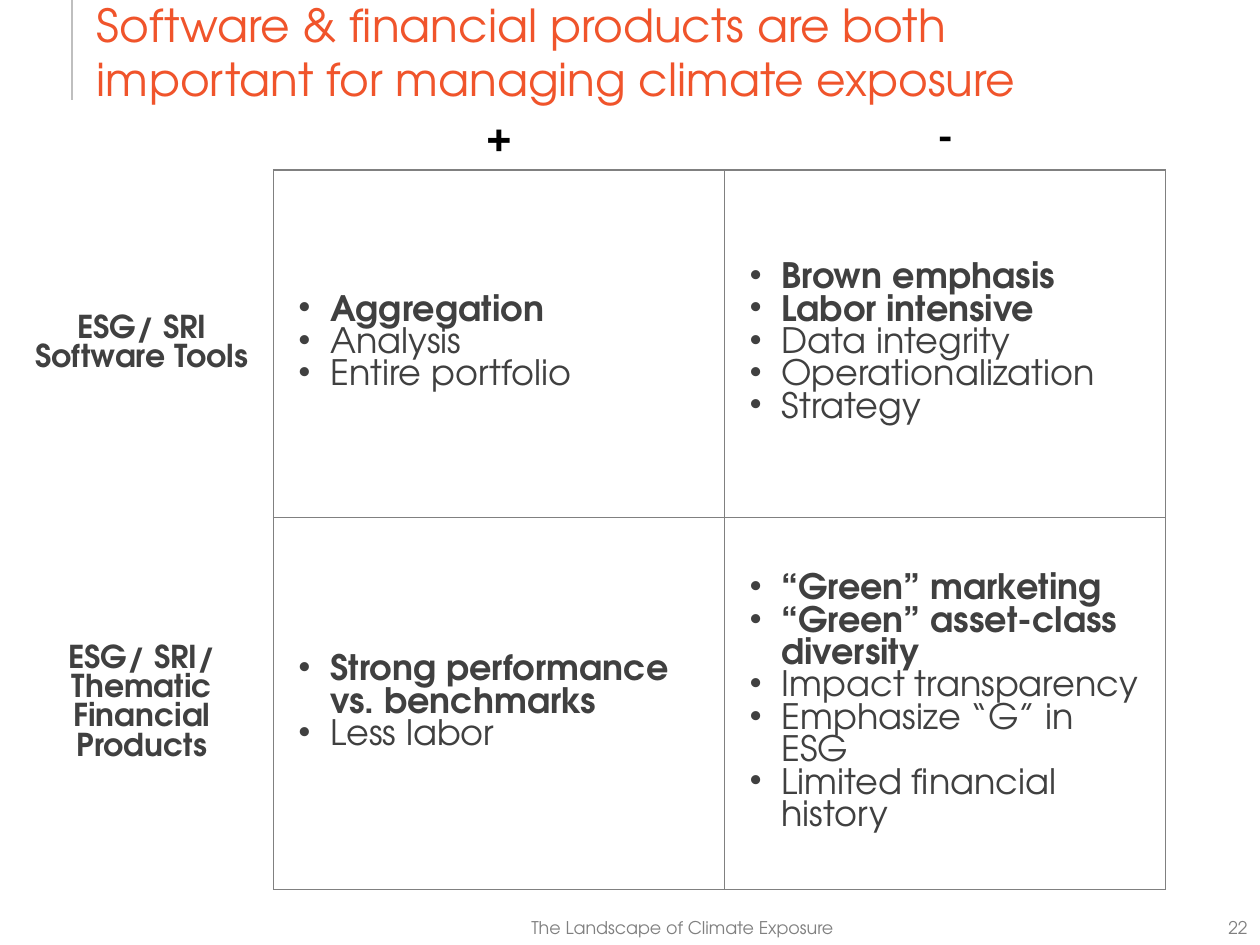
from dataclasses import dataclass

from lxml import etree
from pptx import Presentation
from pptx.dml.color import RGBColor
from pptx.enum.shapes import MSO_CONNECTOR
from pptx.enum.text import MSO_ANCHOR, PP_ALIGN
from pptx.oxml.ns import qn
from pptx.util import Pt

LEFT, CENTER, RIGHT = PP_ALIGN.LEFT, PP_ALIGN.CENTER, PP_ALIGN.RIGHT
TOP, MIDDLE, BOTTOM = MSO_ANCHOR.TOP, MSO_ANCHOR.MIDDLE, MSO_ANCHOR.BOTTOM
STRAIGHT = MSO_CONNECTOR.STRAIGHT


@dataclass(frozen=True)
class Theme:
    font: str = "TeX Gyre Adventor"
    accent: str = "F0542B"
    body: str = "404040"
    sign: str = "000000"
    muted: str = "808080"
    rule: str = "BFBFBF"
    title_size: int = 26
    sign_size: int = 22
    body_size: int = 20
    label_size: int = 18
    footer_size: int = 10
    tight: float = 0.925  # line pitch in table text, as a share of type size


class Deck:
    def __init__(self, slide, theme):
        self.slide, self.theme = slide, theme

    def style(self, p, size, color, align=LEFT, bold=False, pitch=None):
        p.alignment = align
        p.font.name, p.font.size, p.font.bold = self.theme.font, Pt(size), bold
        p.font.color.rgb = RGBColor.from_string(color)
        if pitch:
            p.line_spacing = Pt(round(size * pitch, 1))

    def text(self, text, box, size, color, align=LEFT, anchor=TOP, pitch=None):
        tf = self.slide.shapes.add_textbox(*map(Pt, box)).text_frame
        tf.word_wrap, tf.vertical_anchor = True, anchor
        p = tf.paragraphs[0]
        p.text = text
        self.style(p, size, color, align, pitch=pitch)

    def line(self, x1, y1, x2, y2, color, width):
        sp = self.slide.shapes.add_connector(STRAIGHT, *map(Pt, (x1, y1, x2, y2)))
        sp.line.color.rgb = RGBColor.from_string(color)
        sp.line.width = Pt(width)
        etree.SubElement(sp._element.spPr, qn("a:effectLst"))

    def table(self, x, y, cols, rows):
        shape = self.slide.shapes.add_table(
            len(rows), len(cols), Pt(x), Pt(y), Pt(sum(cols)), Pt(sum(rows)))
        tbl = shape.table
        tbl.first_row = tbl.horz_banding = False
        for col, width in zip(tbl.columns, cols):
            col.width = Pt(width)
        for row, height in zip(tbl.rows, rows):
            row.height = Pt(height)
        return tbl

    def borders(self, cell, sides):
        tc_pr = cell._tc.get_or_add_tcPr()
        for i, side in enumerate("LRTB"):
            ln = etree.Element(qn(f"a:ln{side}"), w=str(Pt(1)))
            if side in sides:
                fill = etree.SubElement(ln, qn("a:solidFill"))
                etree.SubElement(fill, qn("a:srgbClr"), val=self.theme.muted)
            else:
                etree.SubElement(ln, qn("a:noFill"))
            tc_pr.insert(i, ln)

    def cell(self, cell, items, size, color, sides, align=LEFT, inset=None,
             bold_count=1, bullets=False):
        cell.fill.background()
        self.borders(cell, sides)
        if inset:
            cell.vertical_anchor = MIDDLE
            cell.margin_left = cell.margin_right = Pt(inset)
            cell.margin_top = cell.margin_bottom = Pt(inset)
        tf = cell.text_frame
        tf.text = "\n".join(items)
        for i, p in enumerate(tf.paragraphs):
            self.style(p, size, color, align, i < bold_count, self.theme.tight)
            if bullets:
                p_pr = p._p.get_or_add_pPr()
                p_pr.set("marL", str(Pt(18)))
                p_pr.set("indent", str(-Pt(18)))
                bu = etree.Element(qn("a:buChar"), char="•")
                p_pr.insert(list(p_pr).index(p_pr.find(qn("a:defRPr"))), bu)


# Each row: label, then (items, number of leading bold items) per column
ROWS = [
    ("ESG/ SRI Software Tools",
     (["Aggregation", "Analysis", "Entire portfolio"], 1),
     (["Brown emphasis", "Labor intensive", "Data integrity",
       "Operationalization", "Strategy"], 2)),
    ("ESG/ SRI/ Thematic Financial Products",
     (["Strong performance vs. benchmarks", "Less labor"], 1),
     (["“Green” marketing", "“Green” asset-class diversity",
       "Impact transparency", "Emphasize “G” in ESG",
       "Limited financial history"], 2)),
]


def main():
    prs = Presentation()
    prs.slide_width, prs.slide_height = Pt(720), Pt(540)
    t = Theme()
    s = Deck(prs.slides.add_slide(prs.slide_layouts[6]), t)

    # Footer and page number
    s.text("22", (597.6, 520.6, 122.4, 19.4), t.footer_size, t.muted, RIGHT)
    s.text("The Landscape of Climate Exposure", (239.8, 520.6, 300.2, 19.4),
           t.footer_size, t.muted, CENTER)

    # Title with its rule
    s.line(41, 0, 41, 56.9, t.rule, 1.25)
    s.text("Software & financial products are both\v"
           "important for managing climate exposure",
           (48.2, -2.9, 671.8, 67), t.title_size, t.accent,
           anchor=BOTTOM, pitch=1.19)

    # Comparison table: signs across the top, labels down the left
    tbl = s.table(5.8, 66.2, (150.5, 257.8, 252), (31, 198.7, 212.4))
    s.cell(tbl.cell(0, 0), [""], t.label_size, t.body, "")
    for c, sign in enumerate("+-", 1):
        s.cell(tbl.cell(0, c), [sign], t.sign_size, t.sign, "B", CENTER)
    for r, (label, *columns) in enumerate(ROWS, 1):
        s.cell(tbl.cell(r, 0), [label], t.label_size, t.body, "R", CENTER, 14.4)
        for c, (items, bold_count) in enumerate(columns, 1):
            s.cell(tbl.cell(r, c), items, t.body_size, t.body, "LRTB",
                   inset=14.4, bold_count=bold_count, bullets=True)

    prs.save("out.pptx")


if __name__ == "__main__":
    main()
